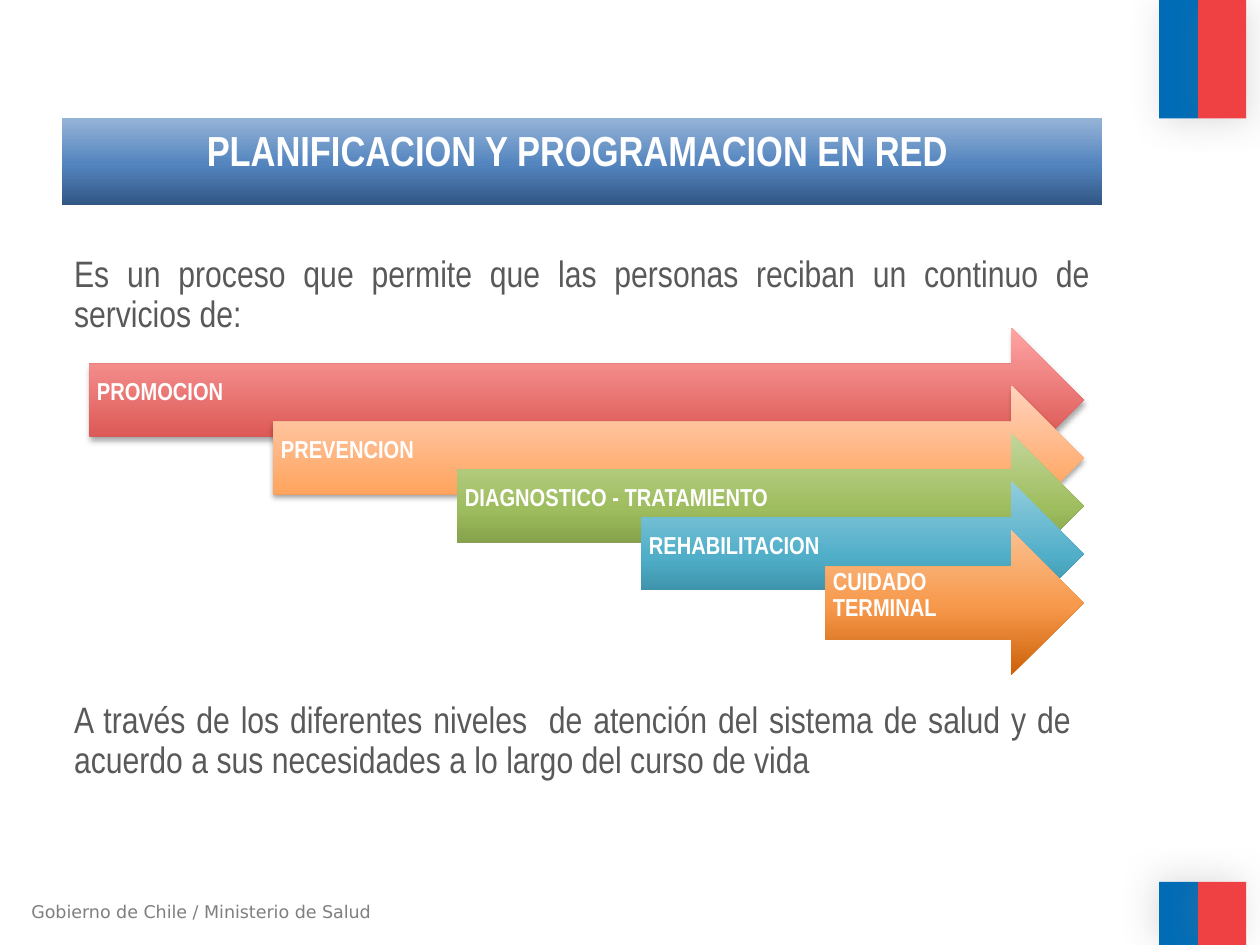
from lxml import etree
from pptx import Presentation
from pptx import util as u
from pptx.dml.color import RGBColor
from pptx.enum import shapes, text
from pptx.oxml import parse_xml
from pptx.oxml.ns import nsdecls, qn

Inches = u.Inches
COLORS = {
    "blue": "006CB7", "red": "EF4144", "white": "FFFFFF",
    "body": "595959", "footer": "7F7F7F", "soft": "808080", "black": "000000",
}
TITLE_STOPS = [(0, "315683"), (48, "5485BF"), (100, "95B3D7")]
ARROW_SHADOW = (COLORS["black"], 35, 3.1, 1.8, 90)


def write_text(shape, content, size, color, font="Arial Narrow", bold=False,
               align=text.PP_ALIGN.LEFT, anchor=text.MSO_ANCHOR.TOP,
               spacing=1.0, insets=(0.1, 0.05, 0.1, 0.05)):
    frame = shape.text_frame
    frame.word_wrap = True
    frame.vertical_anchor = anchor
    frame.margin_left, frame.margin_top, frame.margin_right, frame.margin_bottom = map(Inches, insets)
    paragraph = frame.paragraphs[0]
    paragraph.alignment = align
    paragraph.line_spacing = spacing
    run = paragraph.add_run()
    run.text = content
    run.font.name = font
    run.font.size = u.Pt(size)
    run.font.bold = bold
    run.font.color.rgb = RGBColor.from_string(color)


def draw_shape(kind, box, stops, shadow=None):
    shape = slide.shapes.add_shape(kind, *map(Inches, box))
    shape.line.fill.background()
    shape.shadow.inherit = False
    if isinstance(stops, str):
        shape.fill.solid()
        shape.fill.fore_color.rgb = RGBColor.from_string(stops)
    else:
        shape.fill.gradient()
        shape.fill.gradient_angle = 90
        stop_list = shape._element.spPr.find(qn("a:gradFill")).find(qn("a:gsLst"))
        for old_stop in list(stop_list):
            stop_list.remove(old_stop)
        for position, color in stops:
            stop = etree.SubElement(stop_list, qn("a:gs"), pos=str(position * 1000))
            etree.SubElement(stop, qn("a:srgbClr"), val=color)
    if shadow:
        color, alpha, blur, distance, angle = shadow
        shape._element.spPr.find(qn("a:effectLst")).append(parse_xml(
            f'<a:outerShdw {nsdecls("a")} blurRad="{u.Pt(blur)}" dist="{u.Pt(distance)}" '
            f'dir="{angle * 60000}" rotWithShape="0"><a:srgbClr val="{color}">'
            f'<a:alpha val="{alpha * 1000}"/></a:srgbClr></a:outerShdw>'))
    return shape


presentation = Presentation()
presentation.slide_width = Inches(10)
presentation.slide_height = Inches(7.5)
slide = presentation.slides.add_slide(presentation.slide_layouts[6])

for top, height, angle in [(0, 0.94, 45), (7, 0.5, 215)]:
    for left, width, color in [(9.2, 0.31, "blue"), (9.51, 0.38, "red")]:
        draw_shape(shapes.MSO_SHAPE.RECTANGLE, (left, top, width, height),
                   COLORS[color], (COLORS["soft"], 25, 20, 3, angle))

footer = slide.shapes.add_textbox(Inches(0.15), Inches(7.1), Inches(3.02), Inches(0.27))
write_text(footer, "Gobierno de Chile / Ministerio de Salud", size=10,
           color=COLORS["footer"], font="DejaVu Sans")

arrows = [
    ("PROMOCION", 2.6, [(0, "D1403C"), (100, "FFA6A5")], ARROW_SHADOW),
    ("PREVENCION", 3.06, [(0, "FF953E"), (100, "FFD2BD")], ARROW_SHADOW),
    ("DIAGNOSTICO - TRATAMIENTO", 3.44, [(0, "6A8336"), (48, "9EBD5E"), (100, "C3D69B")], None),
    ("REHABILITACION", 3.82, [(0, "2C778B"), (48, "50AEC8"), (100, "93CDDD")], None),
    ("CUIDADO TERMINAL", 4.21, [(0, "CC6109"), (48, "F7994C"), (100, "FAC090")], None),
]
arrow_right = 8.6
for index, (label, top, stops, shadow) in enumerate(arrows):
    left = 0.71 + 1.46 * index
    width = arrow_right - left
    draw_shape(shapes.MSO_SHAPE.RIGHT_ARROW, (left, top, width, 1.15), stops, shadow)
    caption = slide.shapes.add_textbox(Inches(left), Inches(top + 0.29),
                                       Inches(width - 0.29), Inches(0.57))
    write_text(caption, label, size=14, color=COLORS["white"], bold=True, spacing=0.9,
               anchor=text.MSO_ANCHOR.MIDDLE, insets=(0.06, 0.06, 0.28, 0.18))

statements = [
    (1.98, 8.26, "Es un proceso que permite que las personas reciban un continuo de servicios de:"),
    (5.52, 8.11, "A través de los diferentes niveles  de atención del sistema de salud y de "
                 "acuerdo a sus necesidades a lo largo del curso de vida"),
]
for top, width, content in statements:
    statement = slide.shapes.add_textbox(Inches(0.49), Inches(top), Inches(width), Inches(0.74))
    write_text(statement, content, size=21, color=COLORS["body"], spacing=0.9,
               align=text.PP_ALIGN.JUSTIFY)

title = draw_shape(shapes.MSO_SHAPE.RECTANGLE, (0.49, 0.94, 8.26, 0.69), TITLE_STOPS)
write_text(title, "PLANIFICACION Y PROGRAMACION EN RED ", size=24, color=COLORS["white"],
           bold=True, align=text.PP_ALIGN.CENTER)

presentation.save("out.pptx")
